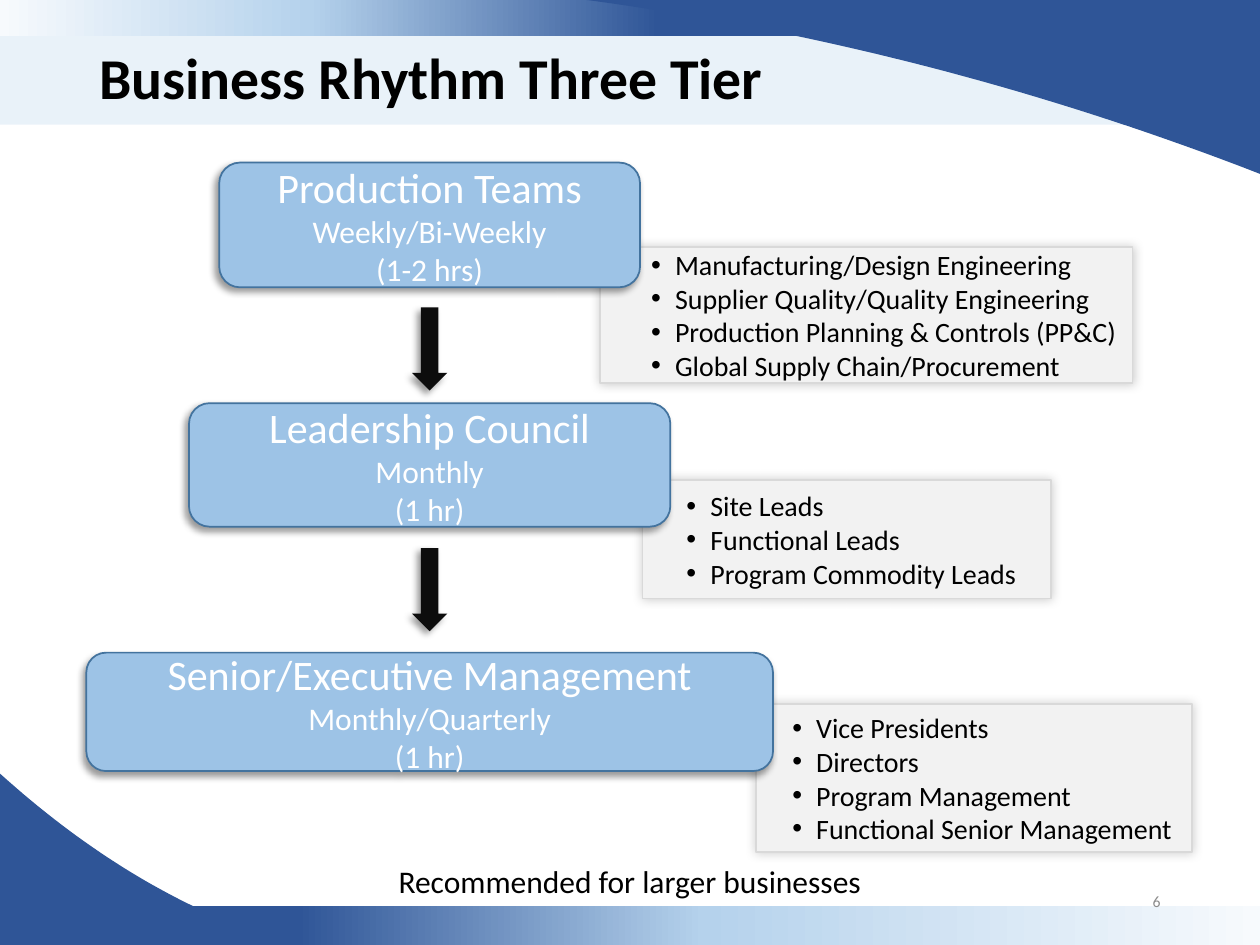
from lxml import etree
from pptx import Presentation
from pptx.dml.color import RGBColor
from pptx.enum.shapes import MSO_SHAPE
from pptx.enum.text import MSO_ANCHOR, PP_ALIGN
from pptx.oxml.ns import qn
from pptx.util import Inches, Pt

RECTANGLE = MSO_SHAPE.RECTANGLE
ROUNDED = MSO_SHAPE.ROUNDED_RECTANGLE
DOWN_ARROW = MSO_SHAPE.DOWN_ARROW
LEFT, CENTER, RIGHT = PP_ALIGN.LEFT, PP_ALIGN.CENTER, PP_ALIGN.RIGHT
TOP, MIDDLE = MSO_ANCHOR.TOP, MSO_ANCHOR.MIDDLE

FONT = "Calibri"
BLACK = RGBColor(0x00, 0x00, 0x00)
WHITE = RGBColor(0xFF, 0xFF, 0xFF)
NAVY = RGBColor(0x2F, 0x55, 0x97)
SKY = RGBColor(0xB5, 0xD2, 0xEC)
MIST = RGBColor(0xF7, 0xFA, 0xFD)
TITLE_BAND = RGBColor(0xBD, 0xD7, 0xEE)
TIER_FILL = RGBColor(0x9D, 0xC3, 0xE6)
TIER_LINE = RGBColor(0x43, 0x73, 0x9E)
MEMBER_FILL = RGBColor(0xF2, 0xF2, 0xF2)
MEMBER_LINE = RGBColor(0xD9, 0xD9, 0xD9)
ARROW_FILL = RGBColor(0x0D, 0x0D, 0x0D)
PAGE_GRAY = RGBColor(0x8C, 0x8C, 0x8C)

TIER_CENTER = 3.41
TIER_SHADOW = (40, 4, 3, 135)
MEMBER_SHADOW = (20, 6, 0, 225)

TIERS = [
    (1.29, 3.34, 0.99, ["Production Teams", "Weekly/Bi-Weekly", "(1-2 hrs)"]),
    (3.2, 3.82, 0.98, ["Leadership Council", "Monthly", "(1 hr)"]),
    (5.18, 5.45, 0.94, ["Senior/Executive Management", "Monthly/Quarterly", "(1 hr)"]),
]
MEMBERS = [
    ((4.76, 1.96, 4.23, 1.08), 0.5, [
        "Manufacturing/Design Engineering",
        "Supplier Quality/Quality Engineering",
        "Production Planning & Controls (PP&C)",
        "Global Supply Chain/Procurement",
    ]),
    ((5.1, 3.81, 3.24, 0.94), 0.44, [
        "Site Leads", "Functional Leads", "Program Commodity Leads",
    ]),
    ((6, 5.59, 3.46, 1.17), 0.38, [
        "Vice Presidents", "Directors", "Program Management",
        "Functional Senior Management",
    ]),
]
ARROW_TOPS = [2.44, 4.35]


def add_shadow(shape, alpha, blur, distance, angle):
    """Give the shape an outer black shadow."""
    effects = shape._element.spPr.find(qn("a:effectLst"))
    shadow = etree.SubElement(effects, qn("a:outerShdw"), blurRad=str(Pt(blur)),
                              dist=str(Pt(distance)), dir=str(angle * 60000),
                              rotWithShape="0")
    color = etree.SubElement(shadow, qn("a:srgbClr"), val=str(BLACK))
    etree.SubElement(color, qn("a:alpha"), val=str(alpha * 1000))


def add_box(slide, kind, box, fill, line=None, shadow=None):
    """Add a preset shape with a plain fill."""
    shape = slide.shapes.add_shape(kind, *map(Inches, box))
    shape.shadow.inherit = False
    shape.fill.solid()
    shape.fill.fore_color.rgb = fill
    if line is None:
        shape.line.fill.background()
    else:
        shape.line.color.rgb = line
        shape.line.width = Pt(1)
    if shadow:
        add_shadow(shape, *shadow)
    return shape


def add_gradient_band(slide, box, stops):
    """Add a rectangle with a left-to-right gradient."""
    band = add_box(slide, RECTANGLE, box, NAVY)
    band.fill.gradient()
    band.fill.gradient_angle = 0
    stop_list = band._element.spPr.find(qn("a:gradFill")).find(qn("a:gsLst"))
    for stop in list(stop_list):
        stop_list.remove(stop)
    for position, color in stops:
        stop = etree.SubElement(stop_list, qn("a:gs"), pos=str(position * 1000))
        etree.SubElement(stop, qn("a:srgbClr"), val=str(color))


def add_swoosh(slide, corner, curve, steps=40):
    """Add a navy corner bounded by a cubic curve."""
    points = []
    for step in range(steps + 1):
        t = step / steps
        weights = ((1 - t) ** 3, 3 * t * (1 - t) ** 2, 3 * t * t * (1 - t), t ** 3)
        points.append(tuple(
            Inches(sum(weight * point[axis] for weight, point in zip(weights, curve)))
            for axis in (0, 1)))
    builder = slide.shapes.build_freeform(*map(Inches, corner))
    builder.add_line_segments(points, close=True)
    swoosh = builder.convert_to_shape()
    swoosh.shadow.inherit = False
    swoosh.fill.solid()
    swoosh.fill.fore_color.rgb = NAVY
    swoosh.line.fill.background()


def write_lines(shape, lines, sizes, color, align, anchor=MIDDLE):
    """Write one paragraph for each line and return the paragraphs."""
    frame = shape.text_frame
    frame.word_wrap = True
    frame.vertical_anchor = anchor
    frame.text = "\n".join(lines)
    for paragraph, size in zip(frame.paragraphs, sizes):
        paragraph.alignment = align
        paragraph.font.name = FONT
        paragraph.font.size = Pt(size)
        paragraph.font.color.rgb = color
    return frame.paragraphs


def add_text(slide, box, text, size, color, align, anchor=MIDDLE):
    """Add a one-line text box and return its paragraph."""
    shape = slide.shapes.add_textbox(*map(Inches, box))
    return write_lines(shape, [text], [size], color, align, anchor)[0]


def add_background(slide):
    """Draw the bands and curved corners."""
    add_title_band(slide)
    add_gradient_band(slide, (0, -0.04, 6.46, 0.33), [(0, MIST), (38, SKY), (81, NAVY)])
    add_swoosh(slide, (10, -0.04), [(4.34, -0.04), (6.1, 0.17), (8.02, 0.61), (10, 1.38)])
    add_gradient_band(slide, (0.2, 7.19, 9.8, 0.31), [(22, NAVY), (55, SKY), (100, MIST)])
    add_swoosh(slide, (0, 7.5), [(2.35, 7.5), (1.62, 7.3), (0.82, 6.88), (0, 6.14)])


def add_title_band(slide):
    """Add the translucent band behind the title."""
    band = add_box(slide, RECTANGLE, (0, 0, 9.24, 0.99), TITLE_BAND)
    color = band._element.spPr.find(qn("a:solidFill"))[0]
    etree.SubElement(color, qn("a:alpha"), val="32000")


def add_members(slide, box, indent, names):
    """Add a bulleted list of the members of a tier."""
    shape = add_box(slide, RECTANGLE, box, MEMBER_FILL, MEMBER_LINE, MEMBER_SHADOW)
    for paragraph in write_lines(shape, names, [16] * len(names), BLACK, LEFT):
        properties = paragraph._p.get_or_add_pPr()
        properties.set("marL", str(Inches(indent)))
        properties.set("indent", str(Inches(-0.19)))
        bullet_font = etree.Element(qn("a:buFont"), typeface="Arial")
        bullet = etree.Element(qn("a:buChar"), char="•")
        properties.insert(0, bullet_font)
        properties.insert(1, bullet)


def add_tier(slide, top, width, height, lines):
    """Add a rounded tier box centred on the flow."""
    box = (TIER_CENTER - width / 2, top, width, height)
    shape = add_box(slide, ROUNDED, box, TIER_FILL, TIER_LINE, TIER_SHADOW)
    write_lines(shape, lines, (24, 18, 18), WHITE, CENTER)


def main():
    """Build the slide and save it."""
    presentation = Presentation()
    presentation.slide_width, presentation.slide_height = Inches(10), Inches(7.5)
    slide = presentation.slides.add_slide(presentation.slide_layouts[6])
    add_background(slide)
    title = add_text(slide, (0.69, 0.29, 8.98, 0.7), "Business Rhythm Three Tier",
                     33, BLACK, LEFT)
    title.font.bold = True
    title.line_spacing = 0.9
    for members in MEMBERS:
        add_members(slide, *members)
    for tier in TIERS:
        add_tier(slide, *tier)
    for top in ARROW_TOPS:
        add_box(slide, DOWN_ARROW, (TIER_CENTER - 0.14, top, 0.28, 0.66), ARROW_FILL,
                shadow=TIER_SHADOW)
    add_text(slide, (0, 6.79, 10, 0.4), "Recommended for larger businesses",
             18, BLACK, CENTER, TOP)
    add_text(slide, (7.06, 6.95, 2.25, 0.4), "6", 9, PAGE_GRAY, RIGHT)
    presentation.save("out.pptx")


if __name__ == "__main__":
    main()
